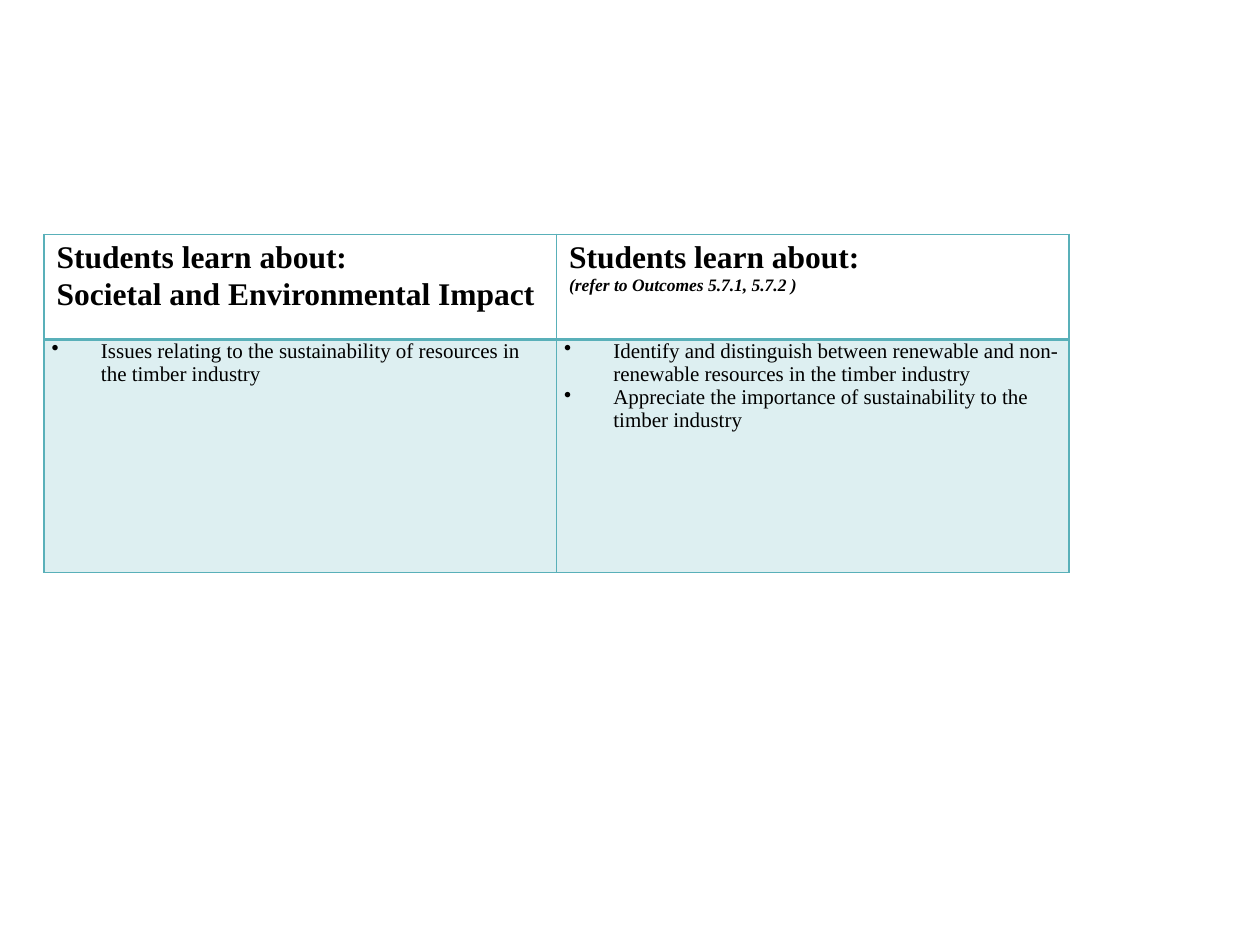
from lxml.etree import SubElement
from pptx import Presentation
from pptx.dml.color import RGBColor as RGB
from pptx.oxml.ns import qn
from pptx.util import Pt

COLORS = {"teal": "59B0B9", "text": "000000"}
FONT = "Times New Roman"

HEADINGS = [
    [("Students learn about:", dict(size=18)),
     ("Societal and Environmental Impact", dict(size=18, before=1))],
    [("Students learn about:", dict(size=18)),
     ("(refer to Outcomes 5.7.1, 5.7.2 )", dict(size=10, italic=True))],
]
TOPICS = [
    ["Issues relating to the sustainability of resources in the timber industry"],
    ["Identify and distinguish between renewable and non-renewable resources in the timber industry",
     "Appreciate the importance of sustainability to the timber industry"],
]

LEFT, TOP = 25.2, 133.92
COLUMN_WIDTH = 292.8
ROW_HEIGHTS = [60, 133.2]
INDENT, TAB = 28.2, 18


def write(cell, index, text, size=12, bold=False, italic=False, before=0, bullet=False):
    frame = cell.text_frame
    paragraph = frame.add_paragraph() if index else frame.paragraphs[0]
    if before:
        paragraph.space_before = Pt(before)
    if bullet:
        props = paragraph._p.get_or_add_pPr()
        props.set("marL", str(Pt(INDENT)))
        props.set("indent", str(-Pt(INDENT)))
        SubElement(props, qn("a:buChar"), char="•")
        tabs = SubElement(props, qn("a:tabLst"))
        SubElement(tabs, qn("a:tab"), pos=str(Pt(TAB)), algn="l")
    run = paragraph.add_run()
    run.text = text
    font = run.font
    font.name, font.size, font.bold, font.italic = FONT, Pt(size), bold, italic
    font.color.rgb = RGB.from_string(COLORS["text"])


def add_borders(cell, **widths):
    props = cell._tc.get_or_add_tcPr()
    for position, side in enumerate("LRTB"):
        line = SubElement(props, qn(f"a:ln{side}"), w=str(Pt(widths.get(side, 1))))
        solid = SubElement(line, qn("a:solidFill"))
        SubElement(solid, qn("a:srgbClr"), val=COLORS["teal"])
        props.insert(position, line)


def tint(cell, opacity):
    cell.fill.solid()
    cell.fill.fore_color.rgb = RGB.from_string(COLORS["teal"])
    color = cell._tc.tcPr.find(".//" + qn("a:srgbClr"))
    SubElement(color, qn("a:alpha"), val=str(opacity * 1000))


def main():
    deck = Presentation()
    deck.slide_width, deck.slide_height = Pt(720), Pt(540)
    slide = deck.slides.add_slide(deck.slide_layouts[6])
    outcomes = slide.shapes.add_table(
        2, 2, Pt(LEFT), Pt(TOP), Pt(2 * COLUMN_WIDTH), Pt(sum(ROW_HEIGHTS))).table
    outcomes.first_row = outcomes.horz_banding = False
    for row, height in zip(outcomes.rows, ROW_HEIGHTS):
        row.height = Pt(height)

    for column, (heading, topics) in enumerate(zip(HEADINGS, TOPICS)):
        outcomes.columns[column].width = Pt(COLUMN_WIDTH)
        head, body = outcomes.cell(0, column), outcomes.cell(1, column)

        head.fill.background()
        add_borders(head, B=2)
        for index, (text, style) in enumerate(heading):
            write(head, index, text, bold=True, **style)

        tint(body, 20)
        add_borders(body, T=2)
        body.margin_left = body.margin_right = Pt(4.32)
        body.margin_top = body.margin_bottom = Pt(0)
        for index, text in enumerate(topics):
            write(body, index, text, bullet=True)

    deck.save("out.pptx")


if __name__ == "__main__":
    main()
